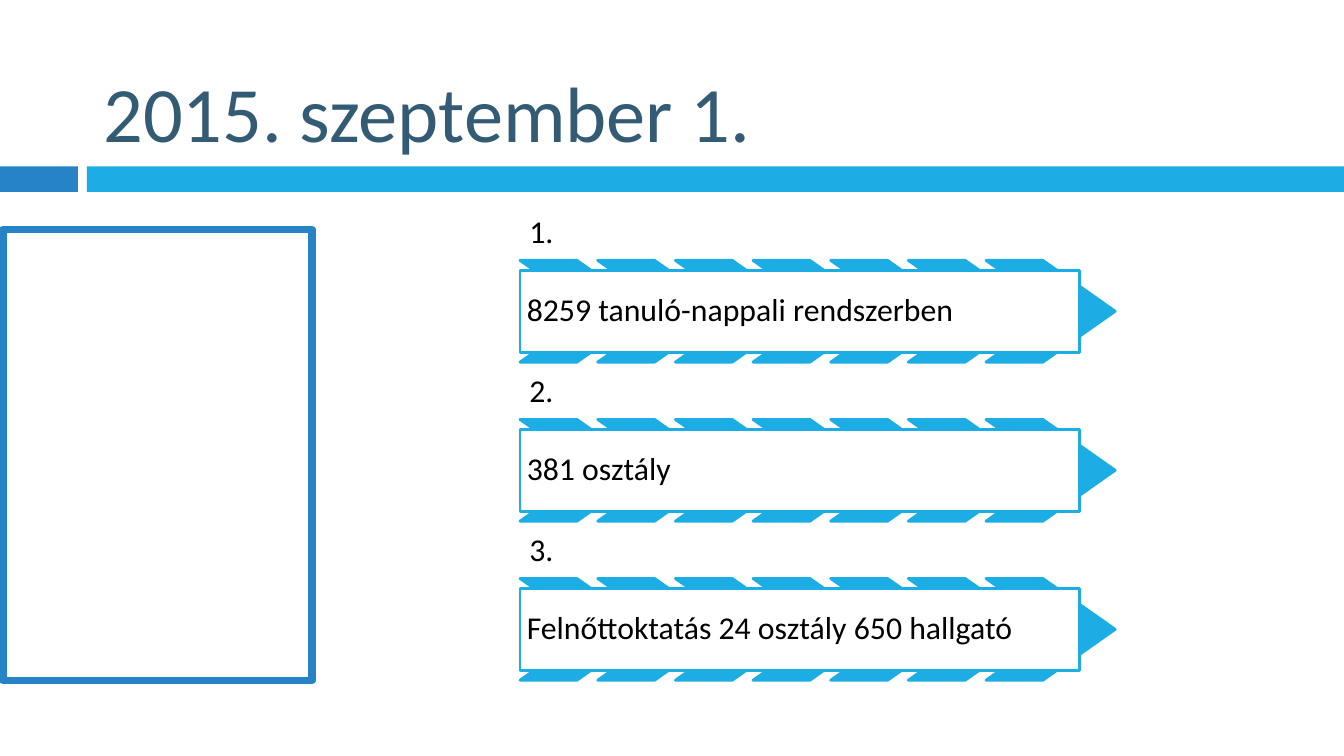
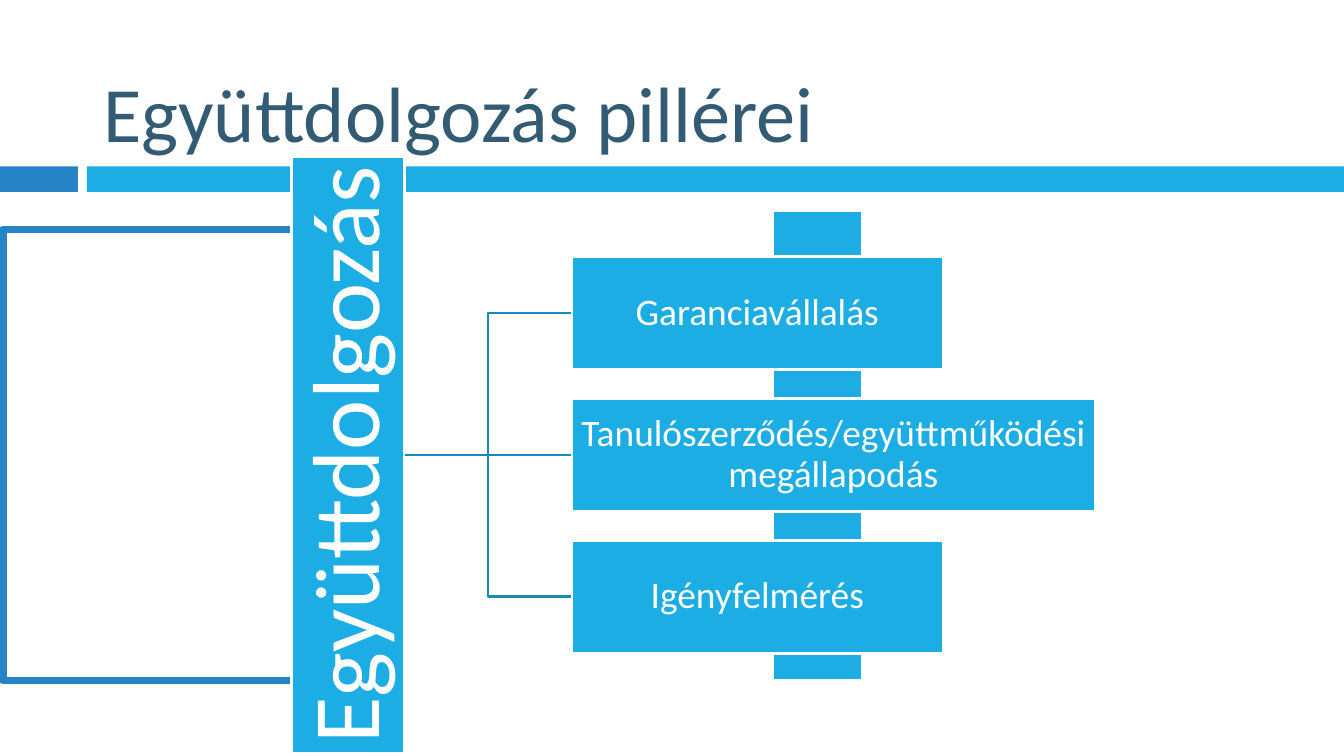
from lxml import etree
from pptx import Presentation
from pptx.dml.color import RGBColor
from pptx.enum.shapes import MSO_CONNECTOR, MSO_SHAPE
from pptx.enum.text import MSO_ANCHOR, MSO_AUTO_SIZE, PP_ALIGN
from pptx.oxml.ns import qn
from pptx.util import Pt

RECT, CHEVRON = MSO_SHAPE.RECTANGLE, MSO_SHAPE.CHEVRON
STRAIGHT, ELBOW = MSO_CONNECTOR.STRAIGHT, MSO_CONNECTOR.ELBOW
LEFT, CENTER = PP_ALIGN.LEFT, PP_ALIGN.CENTER
MIDDLE, BOTTOM = MSO_ANCHOR.MIDDLE, MSO_ANCHOR.BOTTOM

COLORS = {
    "blue": "2683C6",
    "cyan": "1CADE4",
    "link": "168BB7",
    "title": "335B74",
    "white": "FFFFFF",
    "black": "000000",
}
FONT = "Calibri"
SLIDE_W, SLIDE_H = 720, 405
TITLE_BOX = (48.2, 5.8, 635.8, 82.8)
BANDS = [("blue", 0, 41.8), ("cyan", 46.6, SLIDE_W - 46.6)]
BAND_TOP, BAND_H = 89.2, 13.6
FRAME_BOX = (1.7, 123, 165.6, 241.5)

FACTS_TITLE = "2015. szeptember 1."
FACTS = [
    "8259 tanuló-nappali rendszerben",
    "381 osztály",
    "Felnőttoktatás 24 osztály 650 hallgató",
]
FACT_LEFT, FACT_TOP, FACT_STEP = 278.6, 112.5, 85.2
CHEVRONS, CHEVRON_STEP = 7, 41.6

PILLARS_TITLE = "Együttdolgozás pillérei"
ROOT = "Együttdolgozás"
PILLARS = [
    ("Garanciavállalás", 199.5),
    ("Tanulószerződés/együttműködési megállapodás", 281),
    ("Igényfelmérés", 199.5),
]
PILLAR_LEFT, PILLAR_TOP, PILLAR_STEP, PILLAR_H = 306, 137.5, 76, 60.5
ROOT_BOX = (26.8, 213.5, 319.6, PILLAR_H)
STEM_BOX = (311.8, 214.6, 252, 48.2)


def rgb(name):
    return RGBColor.from_string(COLORS[name])


def write(sp, text, size, color, align=LEFT, anchor=MIDDLE, inset=None, spacing=0.9):
    tf = sp.text_frame
    tf.text = text
    frame = {"word_wrap": True, "auto_size": MSO_AUTO_SIZE.NONE, "vertical_anchor": anchor}
    if inset is not None:
        for side in ("left", "top", "right", "bottom"):
            frame[f"margin_{side}"] = Pt(inset)
    p = tf.paragraphs[0]
    font = p.runs[0].font
    formats = [
        (tf, frame),
        (p, {"alignment": align, "line_spacing": spacing}),
        (font, {"name": FONT, "size": Pt(size)}),
    ]
    for target, values in formats:
        for name, value in values.items():
            setattr(target, name, value)
    font.color.rgb = rgb(color)


def add_box(slide, box, fill=None, line=None, width=1.5, kind=RECT):
    sp = slide.shapes.add_shape(kind, *map(Pt, box))
    sp.shadow.inherit = False
    if fill:
        sp.fill.solid()
        sp.fill.fore_color.rgb = rgb(fill)
    else:
        sp.fill.background()
    if line:
        sp.line.color.rgb = rgb(line)
        sp.line.width = Pt(width)
    else:
        sp.line.fill.background()
    return sp


def add_slide(prs, layout, title):
    slide = prs.slides.add_slide(layout)
    sp = slide.shapes.title
    for name, value in zip(("left", "top", "width", "height"), TITLE_BOX):
        setattr(sp, name, Pt(value))
    write(sp, title, 42, "title", anchor=BOTTOM, spacing=1.0)
    add_box(slide, FRAME_BOX, line="blue", width=4)
    return slide


def add_bands(slide, layout):
    for color, left, width in BANDS:
        sp = add_box(slide, (left, BAND_TOP, width, BAND_H), color)
        layout.shapes.element.append(sp.element)


def add_link(slide, root, pillar, kind):
    start_x = Pt(ROOT_BOX[0] + (ROOT_BOX[2] + ROOT_BOX[3]) / 2)
    start_y = root.top + root.height // 2
    end_y = pillar.top + pillar.height // 2
    link = slide.shapes.add_connector(kind, start_x, start_y, pillar.left, end_y)
    link.begin_connect(root, 2)
    link.begin_x, link.begin_y = start_x, start_y
    link.end_connect(pillar, 1)
    link.line.color.rgb = rgb("link")
    link.line.width = Pt(1.5)
    etree.SubElement(link.element.spPr, qn("a:effectLst"))


def build_facts(slide):
    for i, fact in enumerate(FACTS):
        top = FACT_TOP + i * FACT_STEP
        number = slide.shapes.add_textbox(*map(Pt, (FACT_LEFT, top, 296, 26.6)))
        write(number, f"{i + 1}.", 17, "black", anchor=BOTTOM, inset=5)
        for j in range(CHEVRONS):
            box = (FACT_LEFT + j * CHEVRON_STEP, top + 27, 69.2, 54.5)
            sp = add_box(slide, box, "cyan", "cyan", kind=CHEVRON)
            sp.adjustments[0] = 0.71
        sp = add_box(slide, (FACT_LEFT, top + 32.4, 299.6, 44), "white", "cyan")
        write(sp, fact, 17, "black", inset=3.6)


def build_pillars(slide):
    stem = add_box(slide, STEM_BOX, "cyan", "white")
    root = add_box(slide, ROOT_BOX, "cyan", "white")
    stem.rotation = root.rotation = 270
    write(root, ROOT, 51, "white", CENTER, inset=2.9)
    for i, (text, width) in enumerate(PILLARS):
        box = (PILLAR_LEFT, PILLAR_TOP + i * PILLAR_STEP, width, PILLAR_H)
        sp = add_box(slide, box, "cyan", "white")
        write(sp, text, 20, "white", CENTER, inset=0.9)
        add_link(slide, root, sp, STRAIGHT if i == 1 else ELBOW)


def main():
    prs = Presentation()
    prs.slide_width, prs.slide_height = Pt(SLIDE_W), Pt(SLIDE_H)
    layout = prs.slide_layouts[5]
    facts = add_slide(prs, layout, FACTS_TITLE)
    add_bands(facts, layout)
    build_facts(facts)
    build_pillars(add_slide(prs, layout, PILLARS_TITLE))
    prs.save("out.pptx")


if __name__ == "__main__":
    main()
